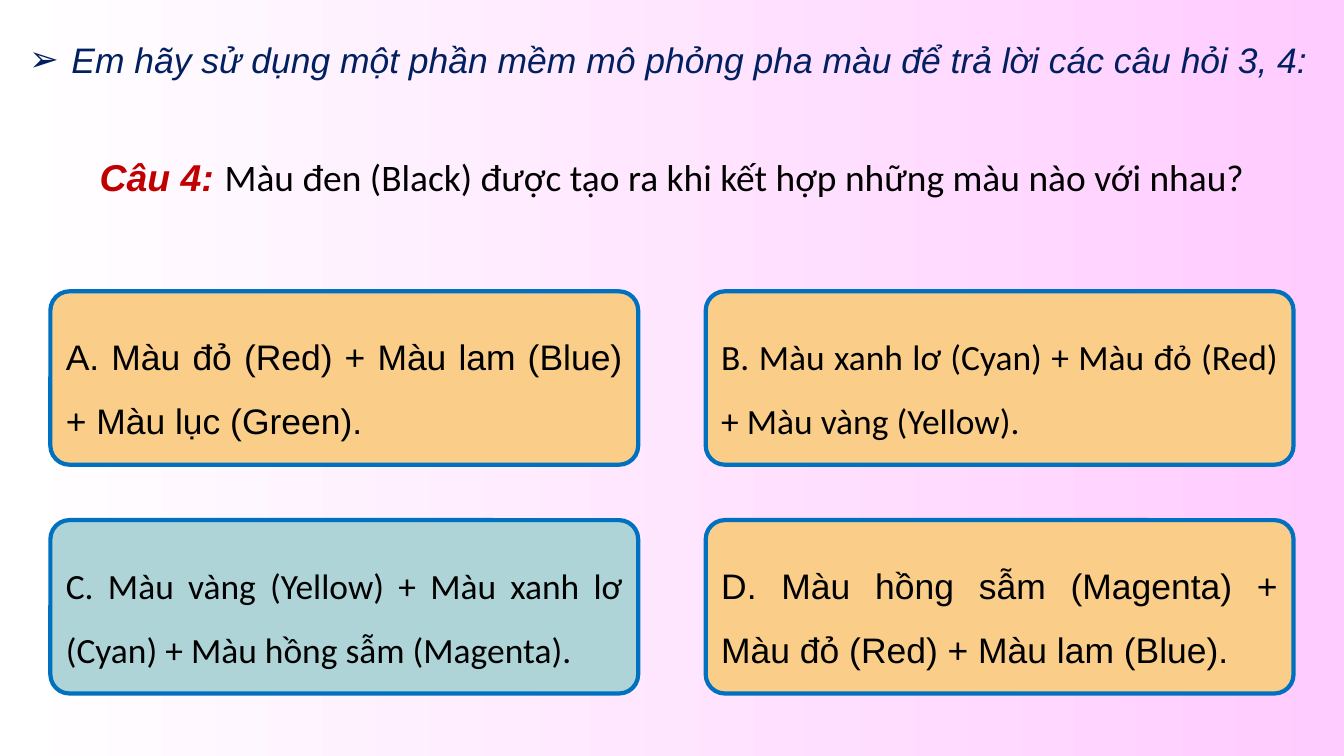
from dataclasses import dataclass

from lxml.etree import SubElement
from pptx import Presentation
from pptx.dml.color import RGBColor
from pptx.enum.shapes import MSO_SHAPE
from pptx.enum.text import MSO_ANCHOR, MSO_AUTO_SIZE, PP_ALIGN
from pptx.oxml.ns import qn
from pptx.util import Inches, Pt

INSTRUCTION = "Em hãy sử dụng một phần mềm mô phỏng pha màu để trả lời các câu hỏi 3, 4:"
QUESTION_LABEL = "Câu 4: "
QUESTION = "Màu đen (Black) được tạo ra khi kết hợp những màu nào với nhau?"


@dataclass(frozen=True)
class Theme:
    heading_font: str = "Arial"
    body_font: str = "Calibri"
    question_size: float = 26.7
    text_size: float = 25.3
    border_width: float = 3
    black: str = "000000"
    navy: str = "002060"
    red: str = "C00000"
    border: str = "0070C0"
    answer: str = "FACD89"
    chosen_answer: str = "AED4D7"
    background: tuple = ("FFFFFF", "FFCCFF")


THEME = Theme()

# Text, font and fill, in reading order
ANSWERS = [
    ("A. Màu đỏ (Red) + Màu lam (Blue) + Màu lục (Green).",
     THEME.heading_font, THEME.answer),
    ("B. Màu xanh lơ (Cyan) + Màu đỏ (Red) + Màu vàng (Yellow).",
     THEME.body_font, THEME.answer),
    ("C. Màu vàng (Yellow) + Màu xanh lơ (Cyan) + Màu hồng sẫm (Magenta).",
     THEME.body_font, THEME.chosen_answer),
    ("D. Màu hồng sẫm (Magenta) + Màu đỏ (Red) + Màu lam (Blue).",
     THEME.heading_font, THEME.answer),
]
COLUMNS = 2
GRID_LEFT, GRID_TOP = 0.5, 2.89
COLUMN_STEP, ROW_STEP = 6.5, 2.27
ANSWER_WIDTH, ANSWER_HEIGHT = 5.83, 1.72


def add_run(paragraph, text, color, **font_format):
    run = paragraph.add_run()
    run.text = text
    run.font.color.rgb = RGBColor.from_string(color)
    for name, value in font_format.items():
        setattr(run.font, name, value)


def format_frame(frame, **frame_format):
    for name, value in {"word_wrap": True, **frame_format}.items():
        setattr(frame, name, value)
    return frame.paragraphs[0]


def set_background(slide):
    fill = slide.background.fill
    fill.gradient()
    fill.gradient_angle = 0
    for stop, color in zip(fill.gradient_stops, THEME.background):
        stop.color.rgb = RGBColor.from_string(color)


def add_question(slide):
    title = slide.shapes.title
    title.left, title.top = Inches(0.35), Inches(1.26)
    title.width, title.height = Inches(12.64), Inches(0.77)
    paragraph = format_frame(title.text_frame, vertical_anchor=MSO_ANCHOR.TOP,
                             auto_size=MSO_AUTO_SIZE.NONE)
    paragraph.alignment = PP_ALIGN.CENTER
    paragraph.line_spacing = 1.5
    size = Pt(THEME.question_size)
    add_run(paragraph, QUESTION_LABEL, THEME.red, name=THEME.heading_font,
            size=size, bold=True, italic=True)
    add_run(paragraph, QUESTION, THEME.black, name=THEME.body_font, size=size)


def add_answer(slide, index, text, font, fill):
    row, column = divmod(index, COLUMNS)
    shape = slide.shapes.add_shape(
        MSO_SHAPE.ROUNDED_RECTANGLE,
        Inches(GRID_LEFT + column * COLUMN_STEP), Inches(GRID_TOP + row * ROW_STEP),
        Inches(ANSWER_WIDTH), Inches(ANSWER_HEIGHT))
    shape.adjustments[0] = 0.11
    shape.shadow.inherit = False
    shape.fill.solid()
    shape.fill.fore_color.rgb = RGBColor.from_string(fill)
    shape.line.color.rgb = RGBColor.from_string(THEME.border)
    shape.line.width = Pt(THEME.border_width)
    paragraph = format_frame(shape.text_frame, vertical_anchor=MSO_ANCHOR.MIDDLE)
    paragraph.alignment = PP_ALIGN.JUSTIFY
    paragraph.line_spacing = 1.5
    add_run(paragraph, text, THEME.black, name=font, size=Pt(THEME.text_size))


def add_instruction(slide):
    box = slide.shapes.add_textbox(Inches(0.19), Inches(0.33), Inches(12.95), Inches(0.53))
    paragraph = format_frame(box.text_frame)
    properties = paragraph._p.get_or_add_pPr()
    indent = Inches(0.42)
    properties.set("marL", str(indent))
    properties.set("indent", str(-indent))
    SubElement(properties, qn("a:buFont"), typeface=THEME.heading_font)
    SubElement(properties, qn("a:buChar"), char="➢")
    add_run(paragraph, INSTRUCTION, THEME.navy, name=THEME.heading_font,
            size=Pt(THEME.text_size), italic=True)


def main():
    presentation = Presentation()
    presentation.slide_width, presentation.slide_height = Inches(13.33), Inches(7.5)
    title_only = presentation.slide_layouts.get_by_name("Title Only")
    slide = presentation.slides.add_slide(title_only)
    set_background(slide)
    add_question(slide)
    for index, answer in enumerate(ANSWERS):
        add_answer(slide, index, *answer)
    add_instruction(slide)
    presentation.save("out.pptx")


if __name__ == "__main__":
    main()
